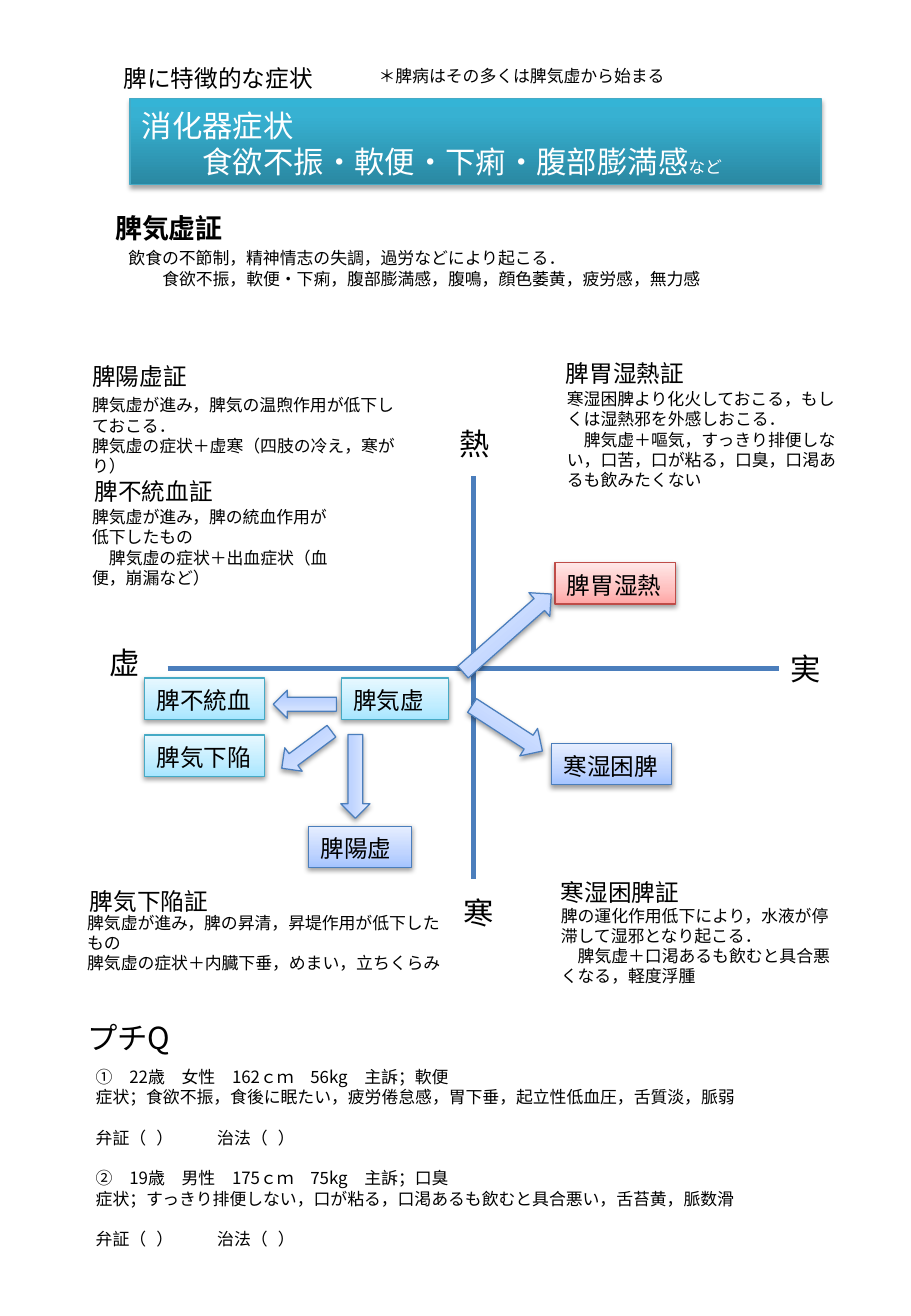
from dataclasses import dataclass
from lxml import etree
from pptx import Presentation
from pptx.dml.color import RGBColor
from pptx.enum.shapes import MSO_CONNECTOR, MSO_SHAPE
from pptx.enum.text import MSO_ANCHOR, PP_ALIGN
from pptx.oxml.ns import qn
from pptx.util import Pt

RECT = MSO_SHAPE.RECTANGLE
ARROW = MSO_SHAPE.RIGHT_ARROW
STRAIGHT = MSO_CONNECTOR.STRAIGHT
TOP = MSO_ANCHOR.TOP
LEFT = PP_ALIGN.LEFT


@dataclass(frozen=True)
class Palette:
    stops: tuple
    line: str
    shadow_alpha: int = 38
    shadow_dist: float = 1.6


@dataclass(frozen=True)
class Theme:
    font: str = "Noto Sans CJK JP"
    ink: str = "000000"
    white: str = "FFFFFF"
    axis: str = "4B7EBC"
    body: int = 10
    label: int = 14
    heading: int = 16
    large: int = 18
    leading: float = 1.2
    banner: Palette = Palette(((0, "2A88A2"), (80, "37B1D2"), (100, "34B4D6")), "46AAC5", 35, 1.8)
    aqua: Palette = Palette(((0, "A7E6FF"), (35, "C1EDFF"), (100, "E7F8FF")), "46AAC5")
    red: Palette = Palette(((0, "FFA6A5"), (35, "FFC0BF"), (100, "FFE7E7")), "BF4C48")
    blue: Palette = Palette(((0, "A4C4FF"), (35, "BFD4FF"), (100, "E6EEFF")), "4B7EBC")


THEME = Theme()


def add_color(parent, color, alpha=None):
    clr = etree.SubElement(parent, qn("a:srgbClr"), val=color)
    if alpha is not None:
        etree.SubElement(clr, qn("a:alpha"), val=str(alpha * 1000))


def add_run(p, text, *, size, color, bold=False):
    r = p.add_run()
    r.text = text
    r.font.size = Pt(size)
    r.font.bold = bold
    r.font.color.rgb = RGBColor.from_string(color)
    r.font.name = THEME.font
    etree.SubElement(r.font._element, qn("a:ea"), typeface=THEME.font)


def write(p, text, *, size=THEME.body, color=THEME.ink, bold=False, indent=0, before=0, tabs=(), tail=""):
    p.alignment = LEFT
    p.line_spacing = Pt(size * THEME.leading)
    p.space_before = Pt(before)
    pPr = p._p.get_or_add_pPr()
    pPr.set("indent", str(Pt(indent * size)))
    if tabs:
        tab_list = etree.SubElement(pPr, qn("a:tabLst"))
        for pos in tabs:
            etree.SubElement(tab_list, qn("a:tab"), pos=str(Pt(pos)), algn="l")
    add_run(p, text, size=size, color=color, bold=bold)
    if tail:
        add_run(p, tail, size=THEME.body, color=color)


class Sheet:
    def __init__(self, prs, theme):
        self.theme = theme
        self.s = prs.slides.add_slide(prs.slide_layouts[6])

    def fill_text(self, sp, paragraphs, size):
        tf = sp.text_frame
        tf.word_wrap = True
        tf.vertical_anchor = TOP
        tf.margin_left = tf.margin_right = Pt(7.2)
        tf.margin_top = Pt(3.6 + 0.08 * size)
        tf.margin_bottom = Pt(3.6)
        for i, (text, style) in enumerate(paragraphs):
            p = tf.add_paragraph() if i else tf.paragraphs[0]
            write(p, text, **{"size": size, **style})

    def text(self, x, y, w, h, paragraphs, size):
        sp = self.s.shapes.add_textbox(Pt(x), Pt(y), Pt(w), Pt(h))
        self.fill_text(sp, paragraphs, size)

    def label(self, x, y, w, text, size, **style):
        self.text(x, y, w, size * self.theme.leading + 7.2, [(text, style)], size)

    def shape(self, kind, x, y, w, h, palette, rotation=0):
        sp = self.s.shapes.add_shape(kind, Pt(x), Pt(y), Pt(w), Pt(h))
        sp.rotation = rotation
        sp.fill.gradient()
        sp.fill.gradient_angle = 90
        spPr = sp._element.spPr
        stops = spPr.find(".//" + qn("a:gsLst"))
        for old in list(stops):
            stops.remove(old)
        for pos, color in palette.stops:
            add_color(etree.SubElement(stops, qn("a:gs"), pos=str(pos * 1000)), color)
        sp.line.color.rgb = RGBColor.from_string(palette.line)
        sp.line.width = Pt(0.75)
        sp.shadow.inherit = False
        shadow = etree.SubElement(
            spPr.find(qn("a:effectLst")), qn("a:outerShdw"), blurRad=str(Pt(3.1)),
            dist=str(Pt(palette.shadow_dist)), dir="5400000", rotWithShape="0")
        add_color(shadow, self.theme.ink, palette.shadow_alpha)
        return sp

    def box(self, x, y, w, h, paragraphs, size, palette):
        self.fill_text(self.shape(RECT, x, y, w, h, palette), paragraphs, size)

    def axis(self, x1, y1, x2, y2):
        c = self.s.shapes.add_connector(STRAIGHT, Pt(x1), Pt(y1), Pt(x2), Pt(y2))
        c.line.color.rgb = RGBColor.from_string(self.theme.axis)
        c.line.width = Pt(3)
        etree.SubElement(c._element.spPr, qn("a:effectLst"))


PATTERNS = [
    ("脾胃湿熱証", 328.3, 208.1, 329, 226, 177.8, 67.7,
     "寒湿困脾より化火しておこる，もしくは湿熱邪を外感しおこる．",
     "脾気虚＋嘔気，すっきり排便しない，口苦，口が粘る，口臭，口渇あるも飲みたくない", 1),
    ("脾気下陥証", 46.1, 520.6, 44.6, 536.4, 229.7, 43.9,
     "脾気虚が進み，脾の昇清，昇堤作用が低下したもの",
     "脾気虚の症状＋内臓下垂，めまい，立ちくらみ", 0),
    ("脾不統血証", 49, 277.9, 47.5, 295.9, 154.8, 55.4,
     "脾気虚が進み，脾の統血作用が低下したもの",
     "脾気虚の症状＋出血症状（血便，崩漏など）", 1),
    ("寒湿困脾証", 325.4, 515.5, 325.4, 532.1, 177.8, 55.4,
     "脾の運化作用低下により，水液が停滞して湿邪となり起こる．",
     "脾気虚＋口渇あるも飲むと具合悪くなる，軽度浮腫", 1),
    ("脾陽虚証", 47.5, 209.5, 47.5, 229.7, 199.4, 43.9,
     "脾気虚が進み，脾気の温煦作用が低下しておこる．",
     "脾気虚の症状＋虚寒（四肢の冷え，寒がり）", 0),
]
NODES = [
    ("脾気虚", 202.3, 401.8, 63.4, THEME.aqua),
    ("脾気下陥", 85.7, 435.6, 71.3, THEME.aqua),
    ("脾胃湿熱", 329, 333.4, 71.3, THEME.red),
    ("寒湿困脾", 326.9, 440.6, 71.3, THEME.blue),
    ("脾不統血", 85.7, 401.8, 71.3, THEME.aqua),
    ("脾陽虚", 182.9, 489.6, 61.2, THEME.blue),
]
AXIS_ENDS = [("実", 461.5, 380.2), ("虚", 57.6, 376.6), ("熱", 265, 247), ("寒", 267.8, 524.9)]
ARROWS = [
    (162, 409, 37.4, 16.6, 180),
    (163.4, 435.6, 36.7, 17.3, 143.3),
    (185.8, 451.4, 49.7, 17.3, 90),
    (265.7, 365.8, 69.8, 18.7, 318.5),
    (275.8, 421.9, 49.7, 19.4, 32.9),
]
CASES = [
    ("①　22歳　女性　162ｃｍ　56kg　主訴；軟便",
     "症状；食欲不振，食後に眠たい，疲労倦怠感，胃下垂，起立性低血圧，舌質淡，脈弱"),
    ("②　19歳　男性　175ｃｍ　75kg　主訴；口臭",
     "症状；すっきり排便しない，口が粘る，口渇あるも飲むと具合悪い，舌苔黄，脈数滑"),
]


def main():
    prs = Presentation()
    prs.slide_width, prs.slide_height = Pt(540), Pt(779.8)
    t = THEME
    sheet = Sheet(prs, t)

    sheet.label(66.2, 33.1, 218.9, "脾に特徴的な症状", t.label)
    sheet.box(77, 58.3, 409.7, 51.1, [
        ("消化器症状", {"color": t.white}),
        ("食欲不振・軟便・下痢・腹部膨満感", {"color": t.white, "indent": 2, "tail": "など"}),
    ], t.large, t.banner)
    sheet.label(217.4, 34.6, 268.6, "＊脾病はその多くは脾気虚から始まる", t.body)
    sheet.label(61.2, 120.2, 79.9, "脾気虚証", t.heading, bold=True)
    sheet.text(69.1, 142.6, 415.4, 31.7, [
        ("飲食の不節制，精神情志の失調，過労などにより起こる．", {}),
        ("食欲不振，軟便・下痢，腹部膨満感，腹鳴，顔色萎黄，疲労感，無力感", {"indent": 2}),
    ], t.body)

    for title, tx, ty, x, y, w, h, cause, signs, indent in PATTERNS:
        sheet.label(tx, ty, 85, title, t.label)
        sheet.text(x, y, w, h, [(cause, {}), (signs, {"indent": indent})], t.body)

    sheet.axis(99.4, 396, 461.5, 396)
    sheet.axis(280.8, 282.2, 280.8, 520.6)
    for name, x, y, w, palette in NODES:
        sheet.box(x, y, w, 24.5, [(name, {})], t.label, palette)
    for name, x, y in AXIS_ENDS:
        sheet.label(x, y, 40, name, t.large)
    for x, y, w, h, rotation in ARROWS:
        sheet.shape(ARROW, x, y, w, h, t.blue, rotation)

    sheet.label(44.6, 599, 77, "プチQ", t.large)
    gap = t.body * t.leading
    quiz = []
    for patient, signs in CASES:
        quiz += [
            (patient, {"before": gap if quiz else 0}),
            (signs, {}),
            ("弁証（\t）\t治法（\t）", {"before": gap, "tabs": (140, 170, 300)}),
        ]
    sheet.text(49.7, 627.8, 434.9, 116.6, quiz, t.body)
    prs.save("out.pptx")


if __name__ == "__main__":
    main()
